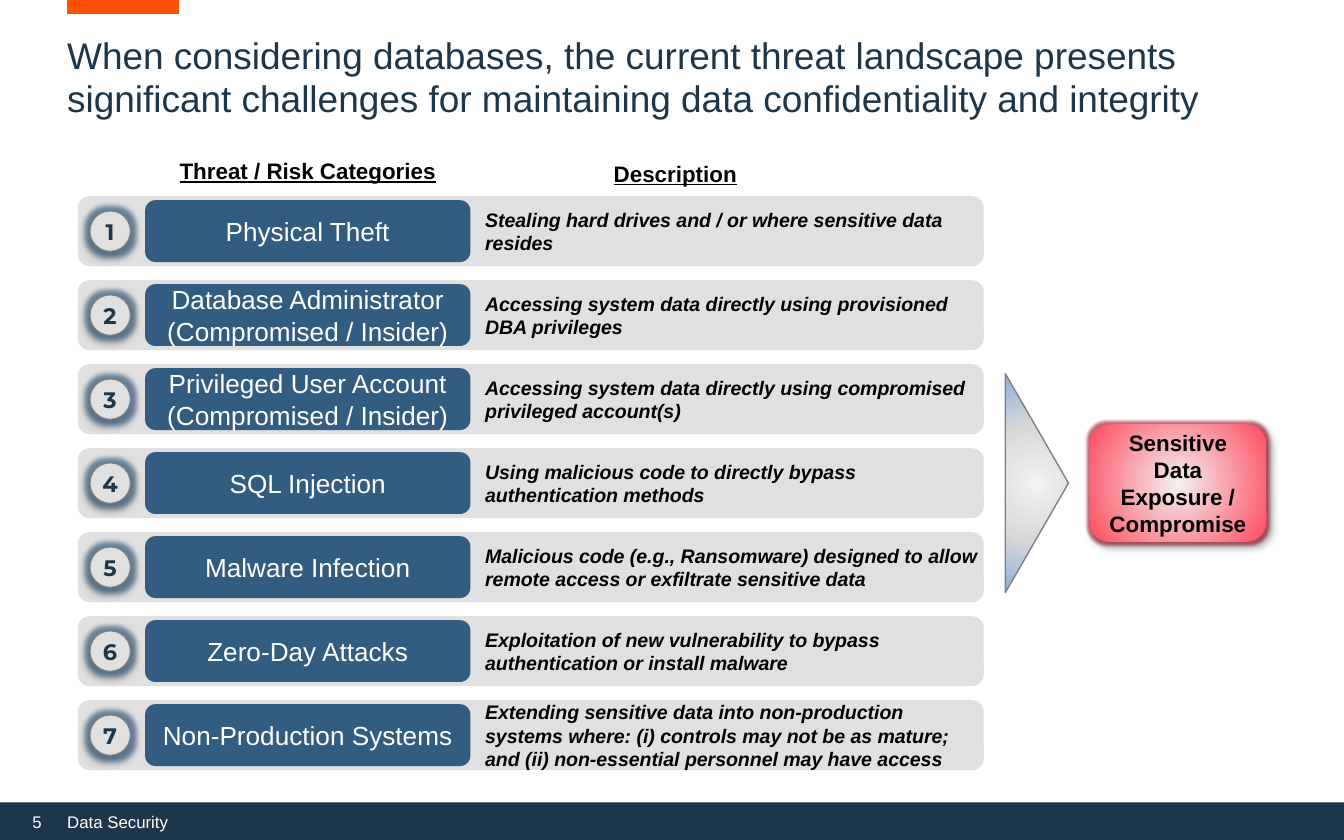
from dataclasses import dataclass
from typing import Any, NamedTuple, Optional

from lxml import etree
from pptx import Presentation
from pptx.dml.color import RGBColor
from pptx.enum.shapes import MSO_CONNECTOR, MSO_SHAPE
from pptx.enum.text import MSO_ANCHOR, PP_ALIGN
from pptx.oxml import parse_xml
from pptx.oxml.ns import nsdecls, qn
from pptx.util import Emu, Inches, Pt

COLORS = {
    "navy": "1D3649", "orange": "FF5004", "band": "E0E0E0", "category": "325C80",
    "outline": "828282", "arrow_outline": "808080", "white": "FFFFFF",
    "black": "000000", "ink": "010203", "pale": "F2F2F2", "silver": "D9D9D9",
    "sky": "8DAED8", "red": "FF4B5E", "dark_red": "A01828",
}
ROW_TOP, ROW_PITCH = 23.36, 10

prs = Presentation()
prs.slide_width, prs.slide_height = Inches(10), Inches(6.25)
slide = prs.slides.add_slide(prs.slide_layouts[6])


class Area(NamedTuple):
    """Left, top, width and height in percent of the slide's size."""
    left: float
    top: float
    width: float
    height: float

    def emu(self) -> tuple[Emu, ...]:
        sizes = (prs.slide_width, prs.slide_height) * 2
        return tuple(Emu(round(share * size / 100)) for share, size in zip(self, sizes))

    def down(self, rows: int) -> "Area":
        return self._replace(top=self.top + rows * ROW_PITCH)


@dataclass(frozen=True)
class TextStyle:
    font: dict[str, Any]
    color: str = "ink"
    align: PP_ALIGN = PP_ALIGN.LEFT
    anchor: MSO_ANCHOR = MSO_ANCHOR.TOP
    wrap: bool = True


@dataclass(frozen=True)
class Glow:
    color: str
    radius: float
    shadow_alpha: int
    blur: float
    distance: float
    angle: int


@dataclass(frozen=True)
class Threat:
    category: str
    description: str


CENTER, MIDDLE = PP_ALIGN.CENTER, MSO_ANCHOR.MIDDLE
TITLE = TextStyle({"name": "Arial", "size": Pt(19.8)}, "navy")
HEADING = TextStyle({"name": "Arial", "size": Pt(12), "bold": True, "underline": True},
                    align=CENTER)
CATEGORY = TextStyle({"name": "Arial", "size": Pt(14)}, "white", CENTER, MIDDLE)
BADGE = TextStyle({"name": "Montserrat", "size": Pt(12), "bold": True},
                  "navy", CENTER, MIDDLE, wrap=False)
DESCRIPTION = TextStyle({"name": "Arial", "size": Pt(10.5), "bold": True, "italic": True},
                        anchor=MIDDLE)
OUTCOME = TextStyle({"name": "Arial", "size": Pt(12), "bold": True}, "black", CENTER, MIDDLE)
FOOTER = TextStyle({"name": "Arial", "size": Pt(9)}, "white",
                   anchor=MSO_ANCHOR.BOTTOM, wrap=False)

BADGE_GLOW = Glow("category", 5, 35, 3.1, 1.8, 90)
OUTCOME_GLOW = Glow("dark_red", 3, 40, 4, 3, 45)

BAND_AREA = Area(5.8, ROW_TOP, 67.4, 8.32)
CATEGORY_AREA = Area(10.8, ROW_TOP + 0.48, 24.2, 7.36)
BADGE_AREA = Area(6.7, ROW_TOP + 1.76, 3, 4.8)
DESCRIPTION_AREA = Area(36.1, ROW_TOP, 37.1, 8.32)

THREATS = [
    Threat("Physical Theft", "Stealing hard drives and / or where sensitive data resides"),
    Threat("Database Administrator (Compromised / Insider)",
           "Accessing system data directly using provisioned DBA privileges"),
    Threat("Privileged User Account (Compromised / Insider)",
           "Accessing system data directly using compromised privileged account(s)"),
    Threat("SQL Injection", "Using malicious code to directly bypass authentication methods"),
    Threat("Malware Infection",
           "Malicious code (e.g., Ransomware) designed to allow remote access or "
           "exfiltrate sensitive data"),
    Threat("Zero-Day Attacks",
           "Exploitation of new vulnerability to bypass authentication or install malware"),
    Threat("Non-Production Systems",
           "Extending sensitive data into non-production systems where: (i) controls may not "
           "be as mature; and (ii) non-essential personnel may have access"),
]


def rgb(color: str) -> RGBColor:
    return RGBColor.from_string(COLORS[color])


def write(shape, text: str, style: TextStyle):
    frame = shape.text_frame
    frame.word_wrap, frame.vertical_anchor = style.wrap, style.anchor
    paragraph = frame.paragraphs[0]
    paragraph.alignment = style.align
    run = paragraph.add_run()
    run.text = text
    for attribute, value in style.font.items():
        setattr(run.font, attribute, value)
    run.font.color.rgb = rgb(style.color)
    return paragraph


def add_label(area: Area, text: str, style: TextStyle):
    """Add text without margins and return its paragraph."""
    label = slide.shapes.add_textbox(*area.emu())
    for side in ("left", "top", "right", "bottom"):
        setattr(label.text_frame, f"margin_{side}", 0)
    return write(label, text, style)


def add_block(kind: MSO_SHAPE, area: Area, fill: str,
              outline: Optional[tuple[str, float]] = None):
    block = slide.shapes.add_shape(kind, *area.emu())
    block.shadow.inherit = False
    block.fill.solid()
    block.fill.fore_color.rgb = rgb(fill)
    if outline:
        block.line.color.rgb, block.line.width = rgb(outline[0]), Pt(outline[1])
    else:
        block.line.fill.background()
    return block


def fill_radially(shape, stops: dict[int, str]) -> None:
    """Replace the solid fill by a gradient from the centre outwards."""
    marks = "".join(f'<a:gs pos="{share * 1000}"><a:srgbClr val="{COLORS[color]}"/></a:gs>'
                    for share, color in stops.items())
    gradient = parse_xml(
        f'<a:gradFill rotWithShape="1" {nsdecls("a")}><a:gsLst>{marks}</a:gsLst>'
        '<a:path path="circle"><a:fillToRect l="50000" t="50000" r="50000" b="50000"/>'
        '</a:path></a:gradFill>')
    properties = shape.element.spPr
    properties.replace(properties.find(qn("a:solidFill")), gradient)


def add_glow(shape, glow: Glow) -> None:
    effects = parse_xml(
        f'<a:effectLst {nsdecls("a")}><a:glow rad="{Pt(glow.radius)}">'
        f'<a:srgbClr val="{COLORS[glow.color]}"><a:alpha val="60000"/></a:srgbClr></a:glow>'
        f'<a:outerShdw blurRad="{Pt(glow.blur)}" dist="{Pt(glow.distance)}" '
        f'dir="{glow.angle * 60000}" rotWithShape="0"><a:srgbClr val="{COLORS["black"]}">'
        f'<a:alpha val="{glow.shadow_alpha * 1000}"/></a:srgbClr></a:outerShdw></a:effectLst>')
    properties = shape.element.spPr
    properties.replace(properties.find(qn("a:effectLst")), effects)


def add_threat(row: int, threat: Threat) -> None:
    add_block(MSO_SHAPE.ROUNDED_RECTANGLE, BAND_AREA.down(row), "band")
    category = add_block(MSO_SHAPE.ROUNDED_RECTANGLE, CATEGORY_AREA.down(row), "category")
    write(category, threat.category, CATEGORY)
    badge = add_block(MSO_SHAPE.OVAL, BADGE_AREA.down(row), "band", ("outline", 0.5))
    add_glow(badge, BADGE_GLOW)
    write(badge, str(row + 1), BADGE)
    add_label(DESCRIPTION_AREA.down(row), threat.description, DESCRIPTION)


def add_footer() -> None:
    add_block(MSO_SHAPE.RECTANGLE, Area(0, 95.52, 100, 4.48), "navy")
    footer = add_label(Area(1.2, 95.84, 19.1, 3.2), "\t5\tData Security", FOOTER)
    footer.line_spacing = 0.9
    tabs = etree.SubElement(footer._p.get_or_add_pPr(), qn("a:tabLst"))
    for position, side in ((0.19, "r"), (0.38, "l")):
        etree.SubElement(tabs, qn("a:tab"), pos=str(Inches(position)), algn=side)


def add_accent() -> None:
    left, top, width, _ = Area(5, 0.8, 8.3, 0).emu()
    accent = slide.shapes.add_connector(MSO_CONNECTOR.STRAIGHT, left, top, left + width, top)
    accent.line.color.rgb, accent.line.width = rgb("orange"), Pt(8)
    etree.SubElement(accent.element.spPr, qn("a:effectLst"))


def add_outcome() -> None:
    arrow = add_block(MSO_SHAPE.ISOSCELES_TRIANGLE, Area(69, 53.76, 16.3, 7.52), "silver",
                      ("arrow_outline", 0.75))
    arrow.rotation = 90
    fill_radially(arrow, {0: "pale", 50: "silver", 100: "sky"})
    outcome = add_block(MSO_SHAPE.ROUNDED_RECTANGLE, Area(81.1, 50.56, 13.1, 13.92), "red")
    fill_radially(outcome, {0: "pale", 100: "red"})
    add_glow(outcome, OUTCOME_GLOW)
    write(outcome, "Sensitive Data Exposure / Compromise", OUTCOME)


def main() -> None:
    add_footer()
    add_accent()
    title = add_label(Area(5, 4, 90, 6.08),
                      "When considering databases, the current threat landscape presents "
                      "significant challenges for maintaining data confidentiality and integrity",
                      TITLE)
    title.line_spacing = Pt(23)
    add_label(Area(13.3, 18.72, 19.2, 3.2), "Threat / Risk Categories", HEADING)
    add_label(Area(35.8, 19.04, 28.9, 3.2), "Description", HEADING)
    for row, threat in enumerate(THREATS):
        add_threat(row, threat)
    add_outcome()
    prs.save("out.pptx")


if __name__ == "__main__":
    main()
